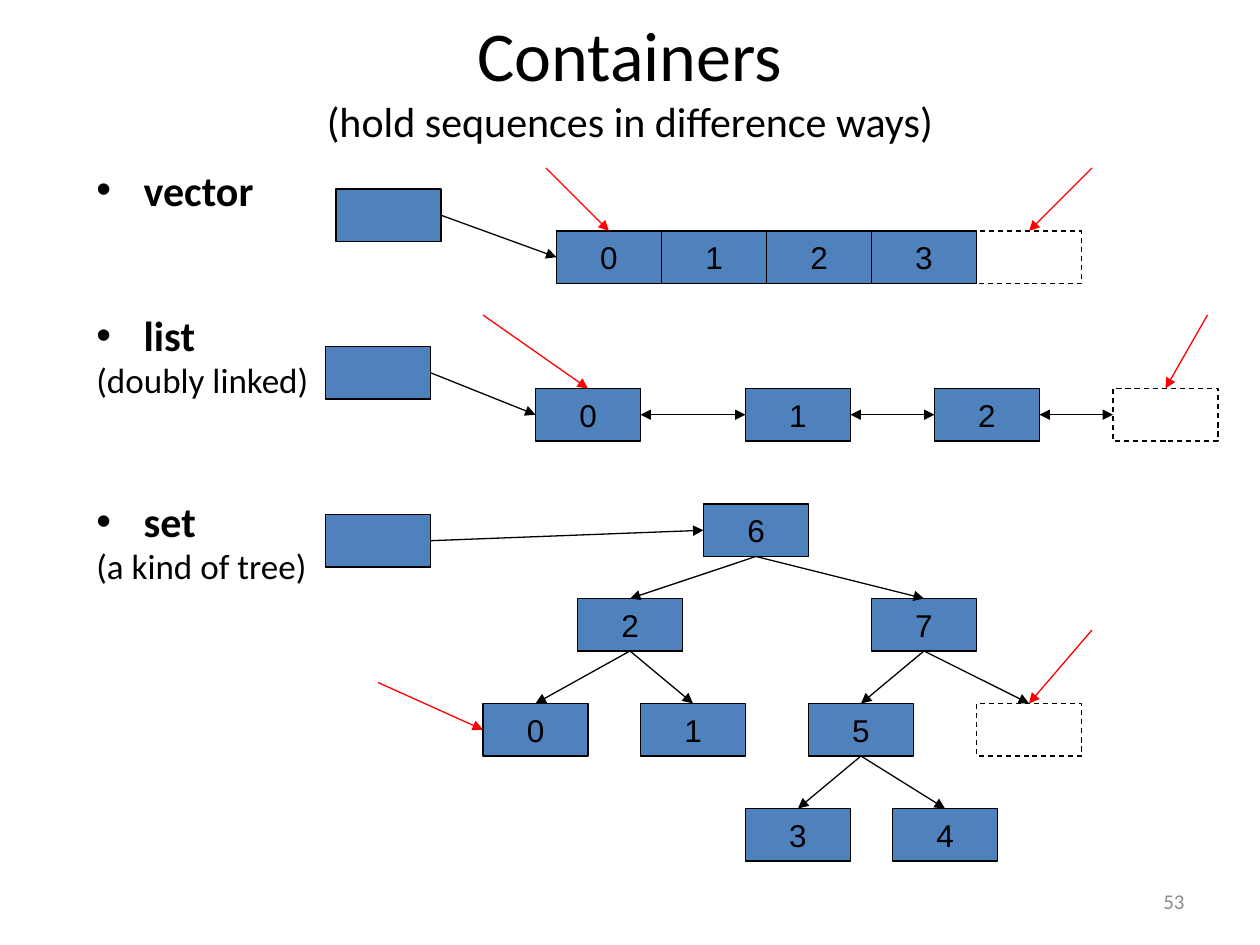
import pptx
import pptx.util
import pptx.dml.color
import pptx.enum.dml
import pptx.enum.shapes
import pptx.enum.text
import pptx.oxml.ns
from lxml import etree

PX = 7620
CELL_W, CELL_H = 100, 50
BLUE, BLACK, RED, GREY = "4F81BD", "000000", "FF0000", "8C8C8C"
TOP, LEFT, BOTTOM, RIGHT = range(4)
ALIGN = pptx.enum.text.PP_ALIGN
ANCHOR = pptx.enum.text.MSO_ANCHOR

TITLE = [("Containers", 40), ("(hold sequences in difference ways)", 24)]
TERMS = [
    ("vector", True, 0),
    ("list", True, 60),
    ("(doubly linked)", False, 4),
    ("set", True, 60),
    ("(a kind of tree)", False, 4),
]
PAGE = "53"

HANDLES = {"vector": (320, 180), "list": (310, 330), "set": (310, 490)}
VALUES = {f"v{i}": (530 + i * CELL_W, 220) for i in range(4)}
VALUES.update({
    "l0": (510, 370), "l1": (710, 370), "l2": (890, 370),
    "s6": (670, 480), "s2": (550, 570), "s7": (830, 570),
    "s0": (460, 670), "s1": (610, 670), "s5": (770, 670),
    "s3": (710, 770), "s4": (850, 770),
})
ENDS = {"v_end": (930, 220), "l_end": (1060, 370), "s_end": (930, 670)}

HANDLE_LINKS = [("vector", "v0"), ("list", "l0"), ("set", "s6")]
LIST_LINKS = [("l0", "l1"), ("l1", "l2"), ("l2", "l_end")]
TREE_LINKS = [
    ("s6", "s2"), ("s6", "s7"), ("s2", "s0"), ("s2", "s1"),
    ("s7", "s5"), ("s7", "s_end"), ("s5", "s3"), ("s5", "s4"),
]
ITERATORS = [
    ((520, 160), "v0", TOP), ((1040, 160), "v_end", TOP),
    ((460, 300), "l0", TOP), ((1150, 300), "l_end", TOP),
    ((360, 650), "s0", LEFT), ((1040, 600), "s_end", TOP),
]


def px(*values):
    return [pptx.util.Emu(v * PX) for v in values]


def rgb(value):
    return pptx.dml.color.RGBColor.from_string(value)


def child(parent, tag, **attrs):
    return etree.SubElement(parent, pptx.oxml.ns.qn(tag), attrs)


def add_run(p, text, size, font="Calibri", color=BLACK, bold=False):
    r = p.add_run()
    r.text = text
    r.font.size = pptx.util.Pt(size)
    r.font.name = font
    r.font.bold = bold
    r.font.color.rgb = rgb(color)


def add_text(s, box, anchor, align):
    tf = s.shapes.add_textbox(*px(*box)).text_frame
    tf.word_wrap = True
    tf.vertical_anchor = anchor
    tf.paragraphs[0].alignment = align
    return tf


def add_cell(s, x, y, label="", dashed=False):
    sp = s.shapes.add_shape(pptx.enum.shapes.MSO_SHAPE.RECTANGLE,
                            *px(x, y, CELL_W, CELL_H))
    sp.shadow.inherit = False
    sp.line.color.rgb = rgb(BLACK)
    sp.line.width = pptx.util.Pt(0.75)
    if dashed:
        sp.fill.background()
        sp.line.dash_style = pptx.enum.dml.MSO_LINE.DASH
    else:
        sp.fill.solid()
        sp.fill.fore_color.rgb = rgb(BLUE)
    if label:
        tf = sp.text_frame
        tf.word_wrap = False
        tf.vertical_anchor = ANCHOR.MIDDLE
        p = tf.paragraphs[0]
        p.alignment = ALIGN.CENTER
        add_run(p, label, 18, "Arial")
    return sp


def add_arrow(s, target, side, source=None, source_side=None,
              start=(0, 0), color=BLACK, both=False):
    c = s.shapes.add_connector(pptx.enum.shapes.MSO_CONNECTOR.STRAIGHT,
                               *px(*start, *start))
    if source is not None:
        c.begin_connect(source, source_side)
    c.end_connect(target, side)
    c.line.color.rgb = rgb(color)
    c.line.width = pptx.util.Pt(0.75)
    ln = c.line._get_or_add_ln()
    if both:
        child(ln, "a:headEnd", type="triangle")
    child(ln, "a:tailEnd", type="triangle")
    child(c._element.spPr, "a:effectLst")


def add_terms(s):
    tf = add_text(s, (80, 160, 260, 594), ANCHOR.TOP, ALIGN.LEFT)
    for i, (text, is_term, gap) in enumerate(TERMS):
        p = tf.add_paragraph() if i else tf.paragraphs[0]
        p.line_spacing = 0.8
        if gap:
            p.space_before = pptx.util.Pt(gap)
        pPr = p._p.get_or_add_pPr()
        indent = 45 * PX
        pPr.set("marL", str(indent))
        pPr.set("indent", str(-indent))
        if is_term:
            child(pPr, "a:buFont", typeface="Arial")
            child(pPr, "a:buChar", char="•")
        else:
            child(pPr, "a:buNone")
        add_run(p, text, 24 if is_term else 20, bold=is_term)


def main():
    prs = pptx.Presentation()
    prs.slide_width, prs.slide_height = px(1200, 900)
    s = prs.slides.add_slide(prs.slide_layouts[6])

    p = add_text(s, (60, 0, 1080, 150), ANCHOR.MIDDLE, ALIGN.CENTER).paragraphs[0]
    for i, (text, size) in enumerate(TITLE):
        if i:
            p.add_line_break()
        add_run(p, text, size)
    add_terms(s)
    tf = add_text(s, (860, 834, 280, 48), ANCHOR.MIDDLE, ALIGN.RIGHT)
    add_run(tf.paragraphs[0], PAGE, 12, color=GREY)

    cells = {name: add_cell(s, *at) for name, at in HANDLES.items()}
    cells.update({name: add_cell(s, *at, label=name[1:])
                  for name, at in VALUES.items()})
    cells.update({name: add_cell(s, *at, dashed=True)
                  for name, at in ENDS.items()})

    for links, source_side, side, both in (
        (HANDLE_LINKS, RIGHT, LEFT, False),
        (LIST_LINKS, RIGHT, LEFT, True),
        (TREE_LINKS, BOTTOM, TOP, False),
    ):
        for a, b in links:
            add_arrow(s, cells[b], side, cells[a], source_side, both=both)
    for start, name, side in ITERATORS:
        add_arrow(s, cells[name], side, start=start, color=RED)

    prs.save("out.pptx")


if __name__ == "__main__":
    main()
